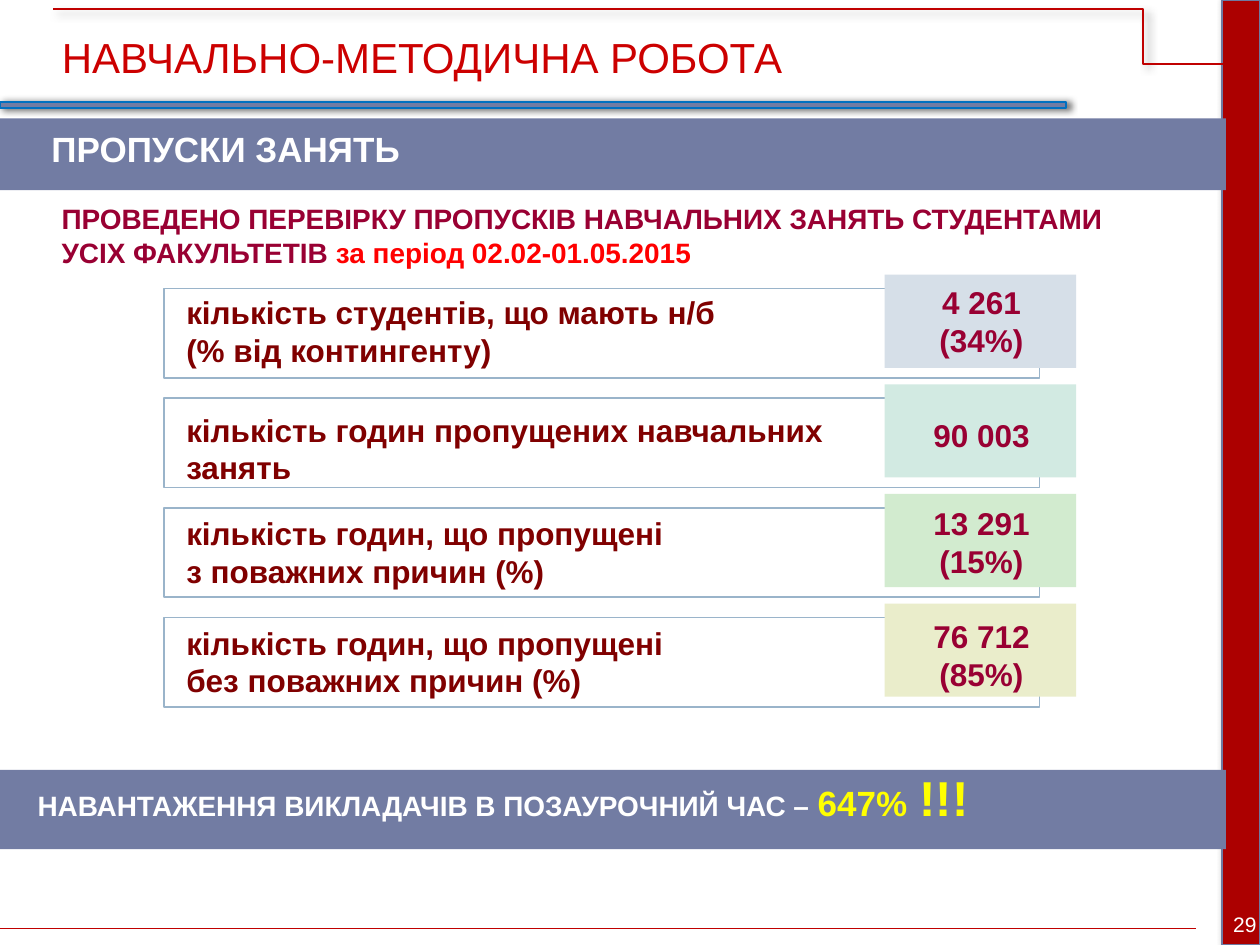
from dataclasses import dataclass
from typing import NamedTuple

from lxml.etree import SubElement
from pptx import Presentation
from pptx.dml.color import RGBColor
from pptx.enum.shapes import MSO_CONNECTOR, MSO_SHAPE
from pptx.enum.text import MSO_ANCHOR, MSO_AUTO_SIZE, PP_ALIGN
from pptx.oxml.ns import qn
from pptx.util import Inches, Pt

COLUMNS, ROWS = 100, 75


@dataclass(frozen=True)
class Theme:
    font: str = "Arial"
    white: str = "FFFFFF"
    title: str = "CC0000"
    side: str = "AC0000"
    side_edge: str = "6E79A1"
    rule: str = "C00000"
    band: str = "727CA3"
    band_edge: str = "0070C0"
    frame_edge: str = "9AB4CA"
    label: str = "800000"
    value: str = "990033"
    period: str = "FF0000"
    alarm: str = "FFFF00"
    number_size: int = 12
    small: int = 16
    medium: int = 18
    large: int = 20
    title_size: int = 24
    alarm_size: int = 28


class Box(NamedTuple):
    column: float
    row: float
    columns: float
    rows: float


class Span(NamedTuple):
    text: str
    color: str
    size: int


class Indicator(NamedTuple):
    label: str
    values: tuple[str, ...]
    tile: str
    label_row: float
    value_row: float


THEME = Theme()
INDICATORS = (
    Indicator("кількість студентів, що мають н/б\n(% від контингенту)",
              ("4 261", "(34%)"), "D6DFE8", 22.8, 22),
    Indicator("кількість годин пропущених навчальних занять",
              ("90 003",), "D2EAE2", 32.1, 32.5),
    Indicator("кількість годин, що пропущені\nз поважних причин (%)",
              ("13 291", "(15%)"), "D2EBCF", 40.3, 39.5),
    Indicator("кількість годин, що пропущені\nбез поважних причин (%)",
              ("76 712", "(85%)"), "EAEDCB", 49, 48.5),
)
FIRST_FRAME_ROW, FIRST_TILE_ROW, INDICATOR_STEP = 22.9, 21.8, 8.7

deck = Presentation()
deck.slide_width, deck.slide_height = Inches(10), Inches(7.5)
slide = deck.slides.add_slide(deck.slide_layouts[5])


def across(columns: float) -> int:
    return round(deck.slide_width * columns / COLUMNS)


def down(rows: float) -> int:
    return round(deck.slide_height * rows / ROWS)


def lengths(box: Box) -> tuple[int, int, int, int]:
    return across(box.column), down(box.row), across(box.columns), down(box.rows)


def add_effects(shape, opacity: int = 0, blur: int = 4, distance: int = 2, angle: int = 0) -> None:
    properties = shape._element.spPr
    for old in properties.findall(qn("a:effectLst")):
        properties.remove(old)
    effects = SubElement(properties, qn("a:effectLst"))
    if opacity:
        shadow = SubElement(effects, qn("a:outerShdw"), blurRad=str(Pt(blur)),
                            dist=str(Pt(distance)), dir=str(angle * 60000), rotWithShape="0")
        color = SubElement(shadow, qn("a:srgbClr"), val="000000")
        SubElement(color, qn("a:alpha"), val=str(opacity * 1000))


def add_panel(box: Box, fill: str | None = None, edge: str | None = None,
              opacity: int = 100, shadow: int = 0, kind: MSO_SHAPE = MSO_SHAPE.RECTANGLE):
    panel = slide.shapes.add_shape(kind, *lengths(box))
    panel.shadow.inherit = False
    if fill:
        panel.fill.solid()
        panel.fill.fore_color.rgb = RGBColor.from_string(fill)
        if opacity < 100:
            color = panel._element.spPr.find(qn("a:solidFill")).find(qn("a:srgbClr"))
            SubElement(color, qn("a:alpha"), val=str(opacity * 1000))
    else:
        panel.fill.background()
    if edge:
        panel.line.color.rgb = RGBColor.from_string(edge)
        panel.line.width = Pt(1)
    else:
        panel.line.fill.background()
    if shadow:
        add_effects(panel, shadow)
    return panel


def add_rule(kind: MSO_CONNECTOR, start: tuple[float, float], end: tuple[float, float]):
    rule = slide.shapes.add_connector(kind, across(start[0]), down(start[1]),
                                      across(end[0]), down(end[1]))
    rule.line.color.rgb = RGBColor.from_string(THEME.rule)
    rule.line.width = Pt(1)
    add_effects(rule)
    return rule


def write(frame, *paragraphs: tuple[Span, ...], align: PP_ALIGN = PP_ALIGN.LEFT,
          anchor: MSO_ANCHOR = MSO_ANCHOR.TOP, bold: bool = True) -> None:
    frame.word_wrap = True
    frame.auto_size = MSO_AUTO_SIZE.NONE
    frame.vertical_anchor = anchor
    for index, spans in enumerate(paragraphs):
        paragraph = frame.add_paragraph() if index else frame.paragraphs[0]
        paragraph.alignment = align
        for span in spans:
            for line_index, line in enumerate(span.text.split("\n")):
                if line_index:
                    paragraph.add_line_break()
                run = paragraph.add_run()
                run.text = line
                run.font.name = THEME.font
                run.font.size = Pt(span.size)
                run.font.bold = bold
                run.font.color.rgb = RGBColor.from_string(span.color)


def add_text(box: Box, *paragraphs: tuple[Span, ...], **formatting) -> None:
    write(slide.shapes.add_textbox(*lengths(box)).text_frame, *paragraphs, **formatting)


def add_backdrop() -> None:
    add_panel(Box(97, 0, 3, 75), THEME.side, THEME.side_edge, shadow=60)
    add_panel(Box(0, 8.1, 84.6, 0.5), THEME.band, THEME.band_edge, shadow=60)
    corner = add_rule(MSO_CONNECTOR.ELBOW, (97.1, 5.1), (4.2, 0.7))
    adjustments = corner._element.spPr.find(qn("a:prstGeom")).get_or_add_avLst()
    SubElement(adjustments, qn("a:gd"), name="adj1", fmla="val 6900")
    add_effects(corner, 40, distance=3, angle=45)
    add_rule(MSO_CONNECTOR.STRAIGHT, (0, 73.7), (94.9, 73.7))


def add_heading() -> None:
    title = slide.shapes.title
    title.left, title.top, title.width, title.height = lengths(Box(3.9, 2, 82, 5))
    write(title.text_frame, (Span("НАВЧАЛЬНО-МЕТОДИЧНА РОБОТА", THEME.title, THEME.title_size),),
          bold=False)
    add_panel(Box(0, 9.4, 97.3, 5.7), THEME.band)
    number = add_panel(Box(95.8, 71.2, 6, 4.3), kind=MSO_SHAPE.DOUBLE_BRACKET).text_frame
    number.margin_left = number.margin_right = number.margin_top = number.margin_bottom = 0
    write(number, (Span("29", THEME.white, THEME.number_size),),
          align=PP_ALIGN.CENTER, anchor=MSO_ANCHOR.MIDDLE, bold=False)
    add_text(Box(3.1, 9.4, 94.1, 4.7), (Span("ПРОПУСКИ ЗАНЯТЬ", THEME.white, THEME.large),),
             anchor=MSO_ANCHOR.MIDDLE)
    add_text(Box(3.9, 15.5, 90.2, 6.4), (
        Span("ПРОВЕДЕНО ПЕРЕВІРКУ ПРОПУСКІВ НАВЧАЛЬНИХ ЗАНЯТЬ СТУДЕНТАМИ УСІХ ФАКУЛЬТЕТІВ ",
             THEME.value, THEME.small),
        Span("за період 02.02-01.05.2015", THEME.period, THEME.small)))


def add_indicator(position: int, indicator: Indicator) -> None:
    offset = position * INDICATOR_STEP
    add_panel(Box(13, FIRST_FRAME_ROW + offset, 69.5, 7.1), THEME.white, THEME.frame_edge, opacity=40)
    add_panel(Box(70.2, FIRST_TILE_ROW + offset, 15.2, 7.4), indicator.tile)
    add_text(Box(13.8, indicator.label_row, 56.5, 7.1),
             (Span(indicator.label, THEME.label, THEME.medium),))
    add_text(Box(71.6, indicator.value_row, 12.6, 1 + 3 * len(indicator.values)),
             *((Span(value, THEME.value, THEME.medium),) for value in indicator.values),
             align=PP_ALIGN.CENTER)


def add_conclusion() -> None:
    add_panel(Box(0, 61.1, 97.3, 6.3), THEME.band)
    add_text(Box(2, 61.5, 93.7, 4.4), (
        Span("НАВАНТАЖЕННЯ ВИКЛАДАЧІВ В ПОЗАУРОЧНИЙ ЧАС – ", THEME.white, THEME.small),
        Span("647%", THEME.alarm, THEME.large)))
    add_text(Box(72, 60.4, 5.9, 5.7), (Span("!!!", THEME.alarm, THEME.alarm_size),))


add_backdrop()
add_heading()
for position, indicator in enumerate(INDICATORS):
    add_indicator(position, indicator)
add_conclusion()
deck.save("out.pptx")
